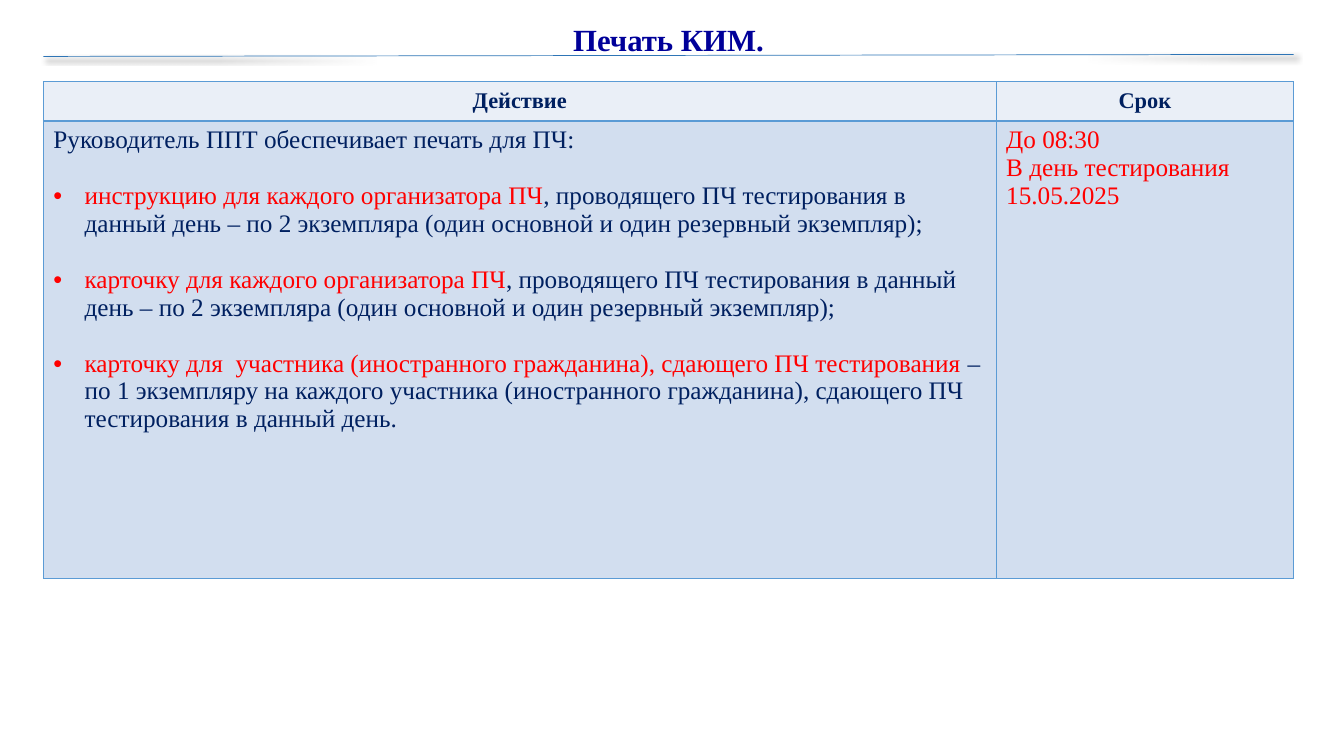
from lxml import etree
from pptx import Presentation
from pptx.dml.color import RGBColor
from pptx.enum.shapes import MSO_CONNECTOR
from pptx.enum.text import MSO_ANCHOR, MSO_AUTO_SIZE, PP_ALIGN
from pptx.oxml import parse_xml
from pptx.oxml.ns import nsdecls, qn
from pptx.util import Inches, Pt

TITLE_BLUE = RGBColor(0x00, 0x00, 0x99)
NAVY = RGBColor(0x00, 0x20, 0x60)
RED = RGBColor(0xFF, 0x00, 0x00)
RULE_BLUE = RGBColor(0x2E, 0x75, 0xB6)
BORDER_BLUE = RGBColor(0x5B, 0x9B, 0xD5)
HEADER_FILL = RGBColor(0xEA, 0xEF, 0xF7)
BODY_FILL = RGBColor(0xD2, 0xDE, 0xEF)
LEFT, WIDTH = 0.43, 12.4


def add_run(p, text, size, color, bold=False):
    r = p.add_run()
    r.text = text
    r.font.name = "Times New Roman"
    r.font.size = Pt(size)
    r.font.bold = bold
    r.font.color.rgb = color


def format_cell(cell, fill):
    tc_pr = cell._tc.get_or_add_tcPr()
    for side in ("lnL", "lnR", "lnT", "lnB"):
        tc_pr.append(parse_xml(
            f'<a:{side} {nsdecls("a")} w="12700"><a:solidFill>'
            f'<a:srgbClr val="{BORDER_BLUE}"/></a:solidFill></a:{side}>'))
    cell.fill.solid()
    cell.fill.fore_color.rgb = fill


prs = Presentation()
prs.slide_width, prs.slide_height = Inches(13.33), Inches(7.5)
s = prs.slides.add_slide(prs.slide_layouts[5])

title = s.shapes.title
title.left, title.top = Inches(LEFT), Inches(0)
title.width, title.height = Inches(WIDTH), Inches(0.63)
tf = title.text_frame
tf.word_wrap = True
tf.auto_size = MSO_AUTO_SIZE.NONE
tf.vertical_anchor = MSO_ANCHOR.BOTTOM
p = tf.paragraphs[0]
p.alignment = PP_ALIGN.CENTER
p.line_spacing = 0.9
add_run(p, "Печать КИМ.", 22, TITLE_BLUE, True)

table = s.shapes.add_table(2, 2, Inches(LEFT), Inches(0.81), Inches(WIDTH), Inches(4.93)).table
for column, width in zip(table.columns, (9.45, 2.95)):
    column.width = Inches(width)
for row, height, fill in zip(table.rows, (0.39, 4.54), (HEADER_FILL, BODY_FILL)):
    row.height = Inches(height)
    for cell in row.cells:
        format_cell(cell, fill)

for cell, heading in zip(table.rows[0].cells, ("Действие", "Срок")):
    cell.vertical_anchor = MSO_ANCHOR.MIDDLE
    p = cell.text_frame.paragraphs[0]
    p.alignment = PP_ALIGN.CENTER
    add_run(p, heading, 16, NAVY, True)

tf = table.cell(1, 0).text_frame
p = tf.paragraphs[0]
p.alignment = PP_ALIGN.JUSTIFY
add_run(p, "Руководитель ППТ обеспечивает печать для ПЧ:", 18, NAVY)

copies = (", проводящего ПЧ тестирования в данный день – по 2 экземпляра "
          "(один основной и один резервный экземпляр);")
materials = [
    ("инструкцию для каждого организатора ПЧ", copies),
    ("карточку для каждого организатора ПЧ", copies),
    ("карточку для  участника (иностранного гражданина), сдающего ПЧ тестирования ",
     "– по 1 экземпляру на каждого участника (иностранного гражданина), "
     "сдающего ПЧ тестирования в данный день."),
]
for material, details in materials:
    p = tf.add_paragraph()
    p.space_before = Pt(20)
    p_pr = p._p.get_or_add_pPr()
    p_pr.set("marL", str(Inches(0.31)))
    p_pr.set("indent", str(-Inches(0.31)))
    etree.SubElement(p_pr, qn("a:buFont")).set("typeface", "Arial")
    etree.SubElement(p_pr, qn("a:buChar")).set("char", "•")
    add_run(p, material, 18, RED)
    add_run(p, details, 18, NAVY)

tf = table.cell(1, 1).text_frame
for i, line in enumerate(("До 08:30", "В день тестирования", "15.05.2025")):
    p = tf.add_paragraph() if i else tf.paragraphs[0]
    add_run(p, line, 18, RED)

rule = s.shapes.add_connector(
    MSO_CONNECTOR.STRAIGHT, Inches(LEFT), Inches(0.56), Inches(LEFT + WIDTH), Inches(0.54))
rule.line.color.rgb = RULE_BLUE
rule.line.width = Pt(0.5)
rule._element.spPr.append(parse_xml(
    f'<a:effectLst {nsdecls("a")}>'
    f'<a:outerShdw blurRad="{Pt(4)}" dist="{Pt(3)}" dir="2700000" algn="tl" rotWithShape="0">'
    '<a:srgbClr val="000000"><a:alpha val="40000"/></a:srgbClr>'
    '</a:outerShdw></a:effectLst>'))

prs.save("out.pptx")
